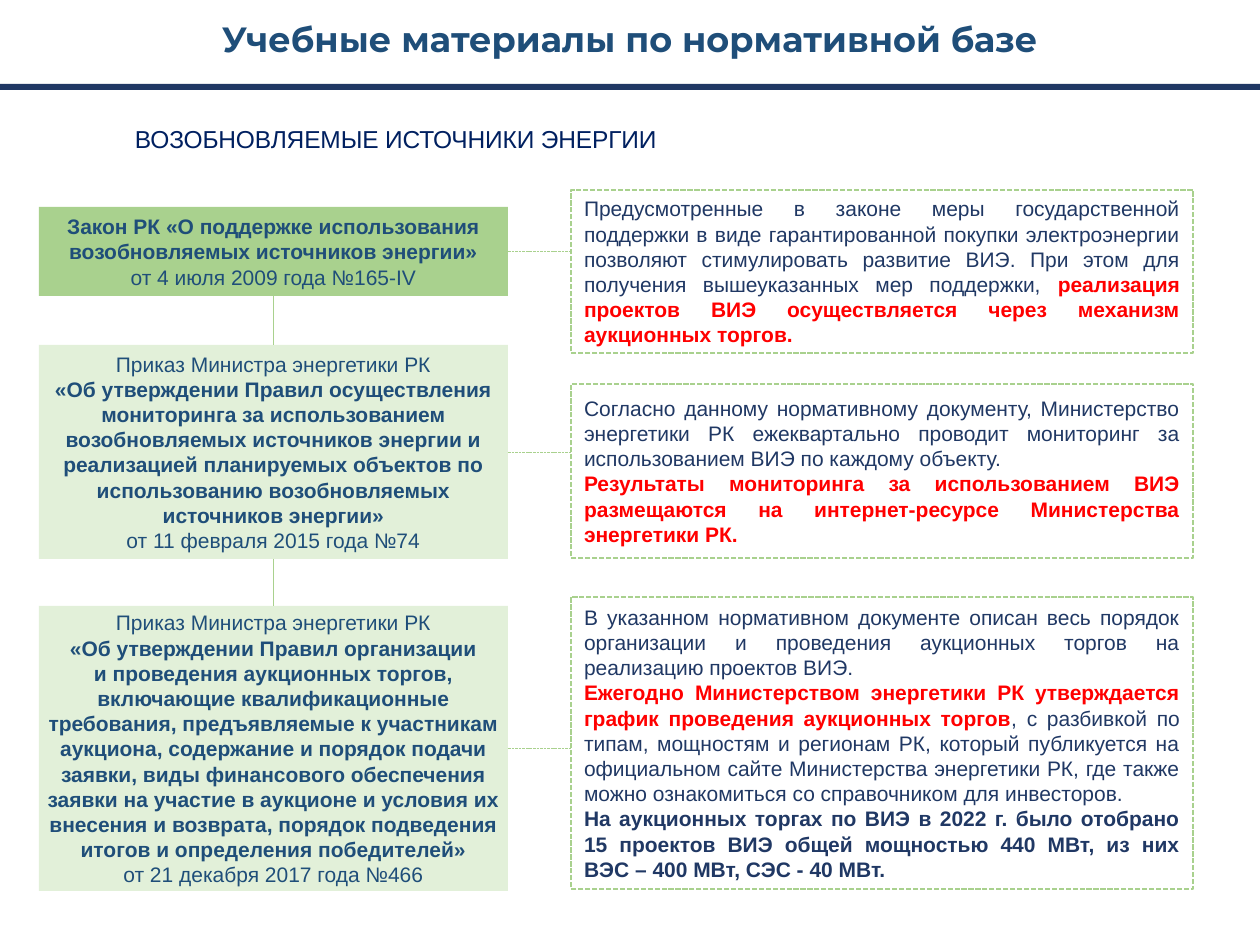
"""Build the slide on renewable energy legislation."""
from lxml.etree import SubElement
from pptx import Presentation
from pptx.dml.color import RGBColor
from pptx.enum.dml import MSO_LINE
from pptx.enum.shapes import MSO_CONNECTOR, MSO_SHAPE
from pptx.enum.text import MSO_ANCHOR, PP_ALIGN
from pptx.oxml.ns import qn
from pptx.util import Pt

COLORS = {
    "title": "1F4E79", "heading": "002060", "navy": "203864", "red": "FF0000",
    "green": "A9D18E", "pale": "E2F0D9",
}
TITLE = "Учебные материалы по нормативной базе"
HEADING = "ВОЗОБНОВЛЯЕМЫЕ ИСТОЧНИКИ ЭНЕРГИИ"
MINISTER = ("Приказ Министра энергетики РК", "title", False)
ROWS = [
    {
        "act_span": (207, 89), "note_span": (190, 163), "fill": "green",
        "act": [
            [("Закон РК «О поддержке использования возобновляемых источников энергии»", "title", True)],
            [("от 4 июля 2009 года №165-IV", "title", False)],
        ],
        "note": [
            [("Предусмотренные в законе меры государственной поддержки в виде "
              "гарантированной покупки электроэнергии позволяют стимулировать развитие ВИЭ. "
              "При этом для получения вышеуказанных мер поддержки, ", "navy", False),
             ("реализация проектов ВИЭ осуществляется через механизм аукционных торгов.", "red", True)],
        ],
    },
    {
        "act_span": (345, 214), "note_span": (384, 174), "fill": "pale",
        "act": [
            [MINISTER],
            [("«Об утверждении Правил осуществления мониторинга за использованием "
              "возобновляемых источников энергии и реализацией планируемых объектов по "
              "использованию возобновляемых источников энергии»", "title", True)],
            [("от 11 февраля 2015 года №74", "title", False)],
        ],
        "note": [
            [("Согласно данному нормативному документу, Министерство энергетики РК "
              "ежеквартально проводит мониторинг за использованием ВИЭ по каждому объекту.",
              "navy", False)],
            [("Результаты мониторинга за использованием ВИЭ размещаются на "
              "интернет-ресурсе Министерства энергетики РК.", "red", True)],
        ],
    },
    {
        "act_span": (606, 285), "note_span": (597, 292), "fill": "pale",
        "act": [
            [MINISTER],
            [("«Об утверждении Правил организации", "title", True)],
            [("и проведения аукционных торгов, включающие квалификационные требования, "
              "предъявляемые к участникам аукциона, содержание и порядок подачи заявки, "
              "виды финансового обеспечения заявки на участие в аукционе и условия их "
              "внесения и возврата, порядок подведения итогов и определения победителей»",
              "title", True)],
            [("от 21 декабря 2017 года №466", "title", False)],
        ],
        "note": [
            [("В указанном нормативном документе описан весь порядок организации и "
              "проведения аукционных торгов на реализацию проектов ВИЭ.", "navy", False)],
            [("Ежегодно Министерством энергетики РК утверждается график проведения "
              "аукционных торгов", "red", True),
             (", с разбивкой по типам, мощностям и регионам РК, который публикуется на "
              "официальном сайте Министерства энергетики РК, где также можно ознакомиться "
              "со справочником для инвесторов.", "navy", False)],
            [("На аукционных торгах по ВИЭ в 2022 г. было отобрано 15 проектов ВИЭ общей "
              "мощностью 440 МВт, из них ВЭС – 400 МВт, СЭС - 40 МВт.", "navy", True)],
        ],
    },
]
ACT_LEFT, ACT_WIDTH, ACT_INSET = 39, 469, 5
NOTE_LEFT, NOTE_WIDTH, NOTE_INSET = 571, 622, 13


def px(value):
    return round(value * 914400 / 126)


def color(name):
    return RGBColor.from_string(COLORS[name])


def add_box(slide, left, top, width, height, fill=None, border=None):
    box = slide.shapes.add_shape(MSO_SHAPE.RECTANGLE, px(left), px(top), px(width), px(height))
    box.shadow.inherit = False
    if fill:
        box.fill.solid()
        box.fill.fore_color.rgb = color(fill)
    else:
        box.fill.background()
    if border:
        box.line.color.rgb = color(border)
        box.line.width = Pt(1)
        box.line.dash_style = MSO_LINE.SQUARE_DOT
    else:
        box.line.fill.background()
    return box


def write(box, paragraphs, align, inset, size=12, font="Arial", anchor=MSO_ANCHOR.MIDDLE):
    frame = box.text_frame
    frame.word_wrap = True
    frame.vertical_anchor = anchor
    frame.margin_left = frame.margin_right = px(inset)
    frame.margin_top = frame.margin_bottom = px(0)
    for index, spans in enumerate(paragraphs):
        para = frame.add_paragraph() if index else frame.paragraphs[0]
        para.alignment = align
        para.font.name, para.font.size = font, Pt(size)
        for text, shade, bold in spans:
            span = para.add_run()
            span.text = text
            span.font.bold = bold
            span.font.color.rgb = color(shade)


def add_link(slide, start, site, end, end_site=None):
    link = slide.shapes.add_connector(MSO_CONNECTOR.STRAIGHT, 0, 0, 0, 0)
    link.begin_connect(start, site)
    if end_site is None:
        link.end_x, link.end_y = end.left, link.begin_y
        link.line.dash_style = MSO_LINE.SQUARE_DOT
    else:
        link.end_connect(end, end_site)
    link.line.color.rgb = color("green")
    link.line.width = Pt(0.5)
    SubElement(link._element.spPr, qn("a:effectLst"))


def main():
    deck = Presentation()
    deck.slide_width, deck.slide_height = px(1260), px(945)
    slide = deck.slides.add_slide(deck.slide_layouts[6])

    title = slide.shapes.add_textbox(px(0), px(11), px(1260), px(55))
    write(title, [[(TITLE, "title", True)]], PP_ALIGN.CENTER, 13, 20, "Montserrat")
    add_box(slide, 0, 84, 1260, 6, fill="navy")

    heading = slide.shapes.add_textbox(px(122), px(115), px(954), px(44))
    write(heading, [[(HEADING, "heading", False)]], PP_ALIGN.JUSTIFY, 13, 14)
    line = heading.text_frame.paragraphs[0]
    line.line_spacing = 1.15
    line.runs[0].font._element.set("spc", "-10")

    previous = None
    for row in ROWS:
        act = add_box(slide, ACT_LEFT, row["act_span"][0], ACT_WIDTH, row["act_span"][1],
                      fill=row["fill"])
        write(act, row["act"], PP_ALIGN.CENTER, ACT_INSET)
        note = add_box(slide, NOTE_LEFT, row["note_span"][0], NOTE_WIDTH, row["note_span"][1],
                       border="green")
        write(note, row["note"], PP_ALIGN.JUSTIFY, NOTE_INSET)
        add_link(slide, act, 3, note)
        if previous is not None:
            add_link(slide, previous, 2, act, 0)
        previous = act

    deck.save("out.pptx")


if __name__ == "__main__":
    main()
